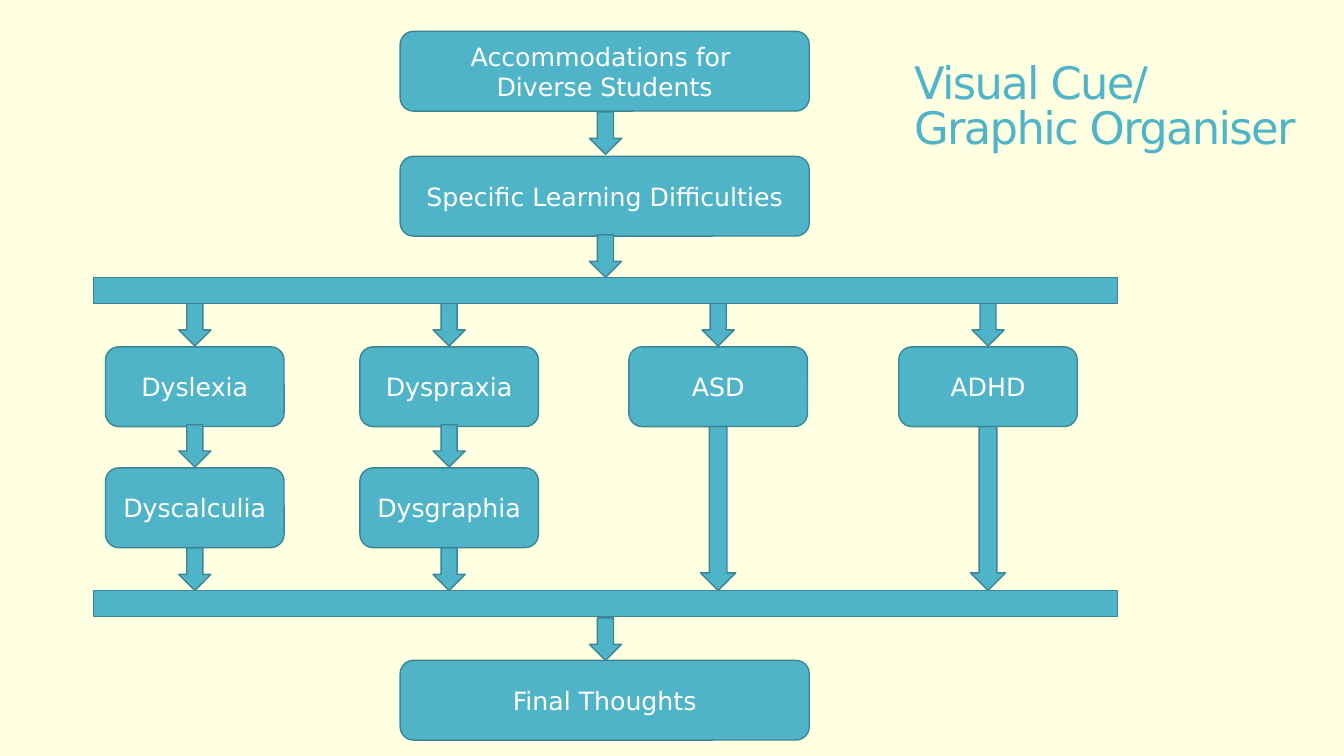
from pptx import Presentation
from pptx.dml.color import RGBColor
from pptx.enum.shapes import MSO_SHAPE as Shape
from pptx.enum.text import MSO_ANCHOR as Anchor, MSO_AUTO_SIZE as AutoSize, PP_ALIGN as Align
from pptx.util import Cm, Pt

CREAM = RGBColor(0xFF, 0xFF, 0xE1)
TEAL = RGBColor(0x50, 0xB4, 0xC8)
DARK_TEAL = RGBColor(0x3B, 0x85, 0x94)
WHITE = RGBColor(0xFF, 0xFF, 0xFF)
FONT = "DejaVu Sans"

BOX_HEIGHT = 2.01
WIDE_BOX, NARROW_BOX = 10.31, 4.5
BAR_LEFT, BAR_WIDTH, BAR_HEIGHT = 2.36, 25.81, 0.66
TOP_BAR, BOTTOM_BAR = 6.99, 14.88
ARROW_WIDTH, ARROW_HEIGHT = 0.81, 1.07
LONG_ARROW_WIDTH = 0.89
STEP = 3.05
CENTRE = 15.24
BRANCHES = [
    (4.91, ["Dyslexia", "Dyscalculia"]),
    (11.32, ["Dyspraxia", "Dysgraphia"]),
    (18.1, ["ASD"]),
    (24.9, ["ADHD"]),
]


def style_text(para, size, colour):
    """Give every run of a paragraph its font, size and colour."""
    for span in para.runs:
        span.font.name = FONT
        span.font.size = Pt(size)
        span.font.color.rgb = colour


def add_part(page, kind, left, top, width, height):
    """Add one outlined teal shape."""
    part = page.shapes.add_shape(kind, Cm(left), Cm(top), Cm(width), Cm(height))
    part.shadow.inherit = False
    part.fill.solid()
    part.fill.fore_color.rgb = TEAL
    part.line.color.rgb = DARK_TEAL
    part.line.width = Pt(1)
    return part


def add_box(page, centre, top, width, text):
    """Add a rounded box with a centred label."""
    box = add_part(page, Shape.ROUNDED_RECTANGLE, centre - width / 2, top, width, BOX_HEIGHT)
    frame = box.text_frame
    frame.text = text
    frame.word_wrap = True
    frame.vertical_anchor = Anchor.MIDDLE
    para = frame.paragraphs[0]
    para.alignment = Align.CENTER
    style_text(para, 18, WHITE)


def add_arrow(page, centre, top, width=ARROW_WIDTH, height=ARROW_HEIGHT):
    """Add a down arrow around a centre line."""
    add_part(page, Shape.DOWN_ARROW, centre - width / 2, top, width, height)


def add_title(page, left, top, width, height):
    """Place and format the slide title."""
    title = page.shapes.title
    title.left, title.top, title.width, title.height = map(Cm, (left, top, width, height))
    frame = title.text_frame
    frame.text = "Visual Cue/ Graphic Organiser"
    frame.word_wrap = True
    frame.auto_size = AutoSize.NONE
    frame.vertical_anchor = Anchor.MIDDLE
    para = frame.paragraphs[0]
    para.alignment = Align.LEFT
    para.line_spacing = 0.85
    style_text(para, 32, TEAL)
    for span in para.runs:
        span.font._element.set("spc", "-120")


def add_trunk(page, centre):
    """Add the central boxes, their arrows and the two bars."""
    for top in (TOP_BAR, BOTTOM_BAR):
        add_part(page, Shape.RECTANGLE, BAR_LEFT, top, BAR_WIDTH, BAR_HEIGHT)
    for top, text in (
        (0.79, "Accommodations for \vDiverse Students"),
        (3.94, "Specific Learning Difficulties"),
        (16.64, "Final Thoughts"),
    ):
        add_box(page, centre, top, WIDE_BOX, text)
    for top in (2.82, 5.92, 15.57):
        add_arrow(page, centre + 0.02, top)


def add_branch(page, centre, top, bottom, labels):
    """Fill one column between the bars with boxes and arrows."""
    for row, label in enumerate(labels):
        arrow_top = top + row * STEP
        add_arrow(page, centre, arrow_top)
        add_box(page, centre, arrow_top + 1.09, NARROW_BOX, label)
    if len(labels) == 1:
        last_top = top + 1.09 + BOX_HEIGHT
        add_arrow(page, centre, last_top, LONG_ARROW_WIDTH, bottom - last_top)
    else:
        add_arrow(page, centre, bottom - ARROW_HEIGHT)


def main():
    """Build and save the graphic organiser."""
    deck = Presentation()
    deck.slide_width, deck.slide_height = Cm(33.87), Cm(19.05)
    page = deck.slides.add_slide(deck.slide_layouts.get_by_name("Title Only"))
    page.background.fill.solid()
    page.background.fill.fore_color.rgb = CREAM
    add_title(page, 22.78, 0.94, 10.54, 3.58)
    add_trunk(page, CENTRE)
    for centre, labels in BRANCHES:
        add_branch(page, centre, TOP_BAR + BAR_HEIGHT, BOTTOM_BAR, labels)
    deck.save("out.pptx")


if __name__ == "__main__":
    main()
